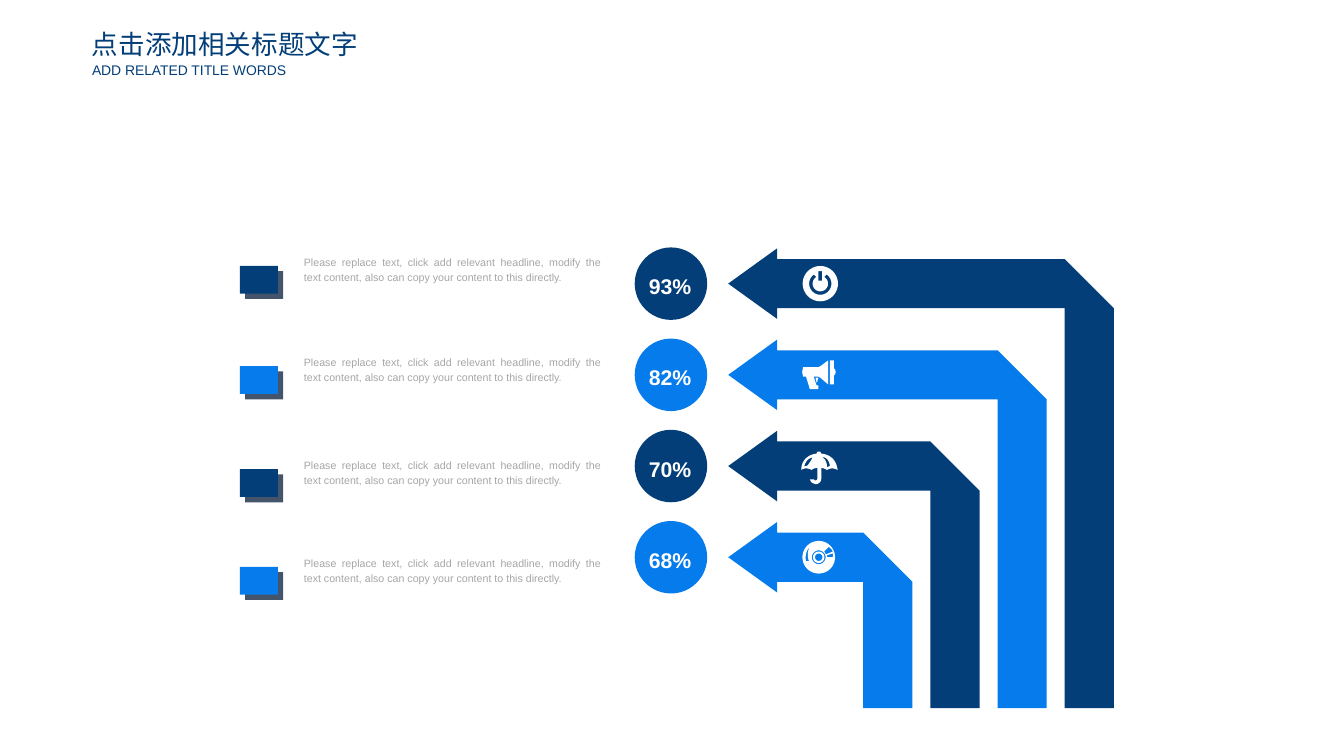
from math import cos, radians, sin

from pptx import Presentation
from pptx.dml.color import RGBColor
from pptx.enum.shapes import MSO_SHAPE as Preset
from pptx.enum.text import MSO_ANCHOR as Anchor
from pptx.enum.text import PP_ALIGN as Align
from pptx.util import Pt

COLOURS = {
    "navy": "033E78",
    "blue": "067BEC",
    "slate": "44546A",
    "grey": "A6A6A6",
    "white": "FFFFFF",
}
FONT = "Arial"
TITLE = "点击添加相关标题文字"
SUBTITLE = "ADD RELATED TITLE WORDS"
CAPTION = ("Please replace text, click add relevant headline, modify the text content, "
           "also can copy your content to this directly.")


def arc(radius, start=0, end=360, centre_x=0.0):
    steps = 40
    angles = [radians(start + (end - start) * i / steps) for i in range(steps + 1)]
    return [(centre_x + radius * cos(a), radius * sin(a)) for a in angles]


POWER = [
    arc(13.3),
    [(-1.4, -9.4), (1.4, -9.4), (1.4, -2.2), (-1.4, -2.2)],
    arc(8.4, -55, 235) + arc(5.8, 240, -60),
]
MEGAPHONE = [
    [(-13, -5.8), (-1.4, -5.8), (0, -6.5), (5.8, -10.8), (5.8, 7.2), (0, 2.2),
     (-1.4, 1.4), (-5, 1.4), (-2.9, 7.9), (-1.4, 7.9), (-1.4, 10.8), (-7.9, 10.8),
     (-10.8, 1.4), (-13, 1.4), (-13.7, -2.2)],
    [(10.1, -5), (11.2, -3.8), (11.5, -2.2), (11.2, -0.4), (10.1, 0.7), (10.1, 7.2),
     (7.2, 7.2), (7.2, -10.8), (10.1, -10.8)],
    [(-1.4, 2.2), (-3.6, 2.2), (-2.9, 5.8), (-2.2, 5.8), (-2.2, 4.3)],
]
UMBRELLA = [
    [(-5, 10.1), (-5, 10.1, -4.3, 10.1, -4.3, 10.8), (-3.6, 10.8),
     (-2.9, 10.8, -2.2, 10.1, -2.2, 9.4), (-2.2, 1.4),
     (-4.3, 1.4, -5.8, 2.2, -6.5, 2.9), (-9.4, 1.4, -12.2, 1.4, -14.4, 2.9),
     (-14.4, -3.6, -10.1, -8.6, -2.9, -9.4), (-2.2, -10.8), (0, -10.8), (0.7, -9.4),
     (8.6, -8.6, 12.2, -3.6, 13, 2.9), (10.1, 1.4, 7.9, 1.4, 5, 2.9),
     (3.6, 2.2, 2.2, 1.4, 0.7, 1.4), (0.7, 9.4), (0.7, 10.8, 0, 12.2, -1.4, 13),
     (-2.2, 13.7, -4, 13.9, -5, 13), (-6.5, 13, -7.2, 11.5, -7.9, 10.1)],
    [(5, 0.7), (5.8, 0.7, 6.5, 0, 7.2, 0), (6.5, -5, 4.3, -6.5, 0.7, -7.2),
     (3.6, -5.8, 5, -2.9, 5, 0.7)],
    [(-12.2, 0), (-10.8, 0, -10.1, 0, -9.4, -0.7), (-7.9, -2.9, -6.5, -5, -5.8, -6.5),
     (-9.4, -5.8, -10.8, -3.6, -12.2, 0)],
]
DISC = [arc(radius, centre_x=-1.2) for radius in (12.3, 5.2, 4.3, 2.8)] + [
    [(-7.9, -7.9), (-10.8, -5, -11.5, -0.7, -10.8, 2.9), (-8.6, 2.9),
     (-10.1, -1.4, -9.4, -5, -7.9, -7.9)],
    [(2.9, -4.3), (4.3, -2.2), (9.4, -4.3), (8.6, -5.8), (6.5, -7.9)],
    [(9.4, -2.9), (5, -1.4), (5, 0), (9.4, 0)],
]
ROWS = [
    ("93%", "navy", POWER, 187.2),
    ("82%", "blue", MEGAPHONE, 262.8),
    ("70%", "navy", UMBRELLA, 340.4),
    ("68%", "blue", DISC, 414),
]

FIRST_ROW, ROW_PITCH = 213.7, 68.7
BADGE_X, BADGE_SIZE = 505.4, 54.6
TIP_X, HEAD_X, HEAD_HALF = 548.5, 585.4, 26.6
BAND = 37
FIRST_EDGE, EDGE_PITCH = 839, 50.6
FLOOR = 533.5
ICON_X = 617.9
CAPTION_X, CAPTION_WIDTH = 221.8, 238.3
MARKER_X, MARKER_DROP, MARKER_SHIFT = 180.7, 13, 4

prs = Presentation()
prs.slide_width, prs.slide_height = Pt(1012.3), Pt(569.5)
slide = prs.slides.add_slide(prs.slide_layouts[6])
shapes = slide.shapes


def rgb(colour):
    return RGBColor.from_string(COLOURS[colour])


def paint(shape, colour):
    shape.shadow.inherit = False
    shape.fill.solid()
    shape.fill.fore_color.rgb = rgb(colour)
    shape.line.fill.background()


def add_preset(preset, x, y, width, height, colour):
    paint(shapes.add_shape(preset, Pt(x), Pt(y), Pt(width), Pt(height)), colour)


def flatten(contour):
    points = []
    for step in contour:
        if len(step) == 2:
            points.append(step)
            continue
        knots = [points[-1], step[:2], step[2:4], step[4:]]
        for i in range(1, 11):
            t = i / 10
            weights = ((1 - t) ** 3, 3 * t * (1 - t) ** 2, 3 * t * t * (1 - t), t ** 3)
            points.append(tuple(sum(w * k[axis] for w, k in zip(weights, knots))
                                for axis in (0, 1)))
    return points


def add_outline(contours, x, y, colour):
    builder = None
    for contour in contours:
        points = [(Pt(x + dx), Pt(y + dy)) for dx, dy in flatten(contour)]
        if builder is None:
            builder = shapes.build_freeform(*points[0], scale=1.0)
        else:
            builder.move_to(*points[0])
        builder.add_line_segments(points[1:], close=True)
    paint(builder.convert_to_shape(), colour)


def add_text(text, x, y, width, height, size, colour, align=Align.LEFT,
             spacing=1.0, bold=False, wrap=False, inset=True):
    frame = shapes.add_textbox(Pt(x), Pt(y), Pt(width), Pt(height)).text_frame
    frame.word_wrap = wrap
    frame.vertical_anchor = Anchor.TOP
    if not inset:
        frame.margin_left = frame.margin_right = frame.margin_top = frame.margin_bottom = 0
    frame.text = text
    paragraph = frame.paragraphs[0]
    paragraph.alignment = align
    paragraph.line_spacing = spacing
    font = paragraph.runs[0].font
    font.name, font.size, font.bold = FONT, Pt(size), bold
    font.color.rgb = rgb(colour)


for index, (percent, colour, icon, caption_y) in enumerate(ROWS):
    row_y = FIRST_ROW + index * ROW_PITCH
    edge = FIRST_EDGE - index * EDGE_PITCH
    top, bottom = row_y - BAND / 2, row_y + BAND / 2

    add_preset(Preset.OVAL, BADGE_X - BADGE_SIZE / 2, row_y - BADGE_SIZE / 2,
               BADGE_SIZE, BADGE_SIZE, colour)
    add_text(percent, 481.7, row_y - 15, 46.8, 30.2, 16, "white",
             Align.JUSTIFY, 1.2, bold=True)

    arrow = [(HEAD_X, row_y - HEAD_HALF), (HEAD_X, top), (edge - BAND, top),
             (edge, bottom), (edge, FLOOR), (edge - BAND, FLOOR),
             (edge - BAND, bottom), (HEAD_X, bottom),
             (HEAD_X, row_y + HEAD_HALF), (TIP_X, row_y)]
    add_outline([arrow], 0, 0, colour)
    add_outline(icon, ICON_X, row_y, "white")

    for shift, marker_colour in ((MARKER_SHIFT, "slate"), (0, colour)):
        add_preset(Preset.RECTANGLE, MARKER_X + shift, caption_y + MARKER_DROP + shift,
                   28.6, 21, marker_colour)
    add_text(CAPTION, CAPTION_X, caption_y, CAPTION_WIDTH, 29.5, 8, "grey",
             Align.JUSTIFY, 1.2, wrap=True)

add_text(TITLE, 69.3, 21, 201.6, 24.5, 20, "navy", inset=False)
add_text(SUBTITLE, 69.3, 46.3, 149.8, 13, 10.5, "navy", inset=False)

prs.save("out.pptx")
